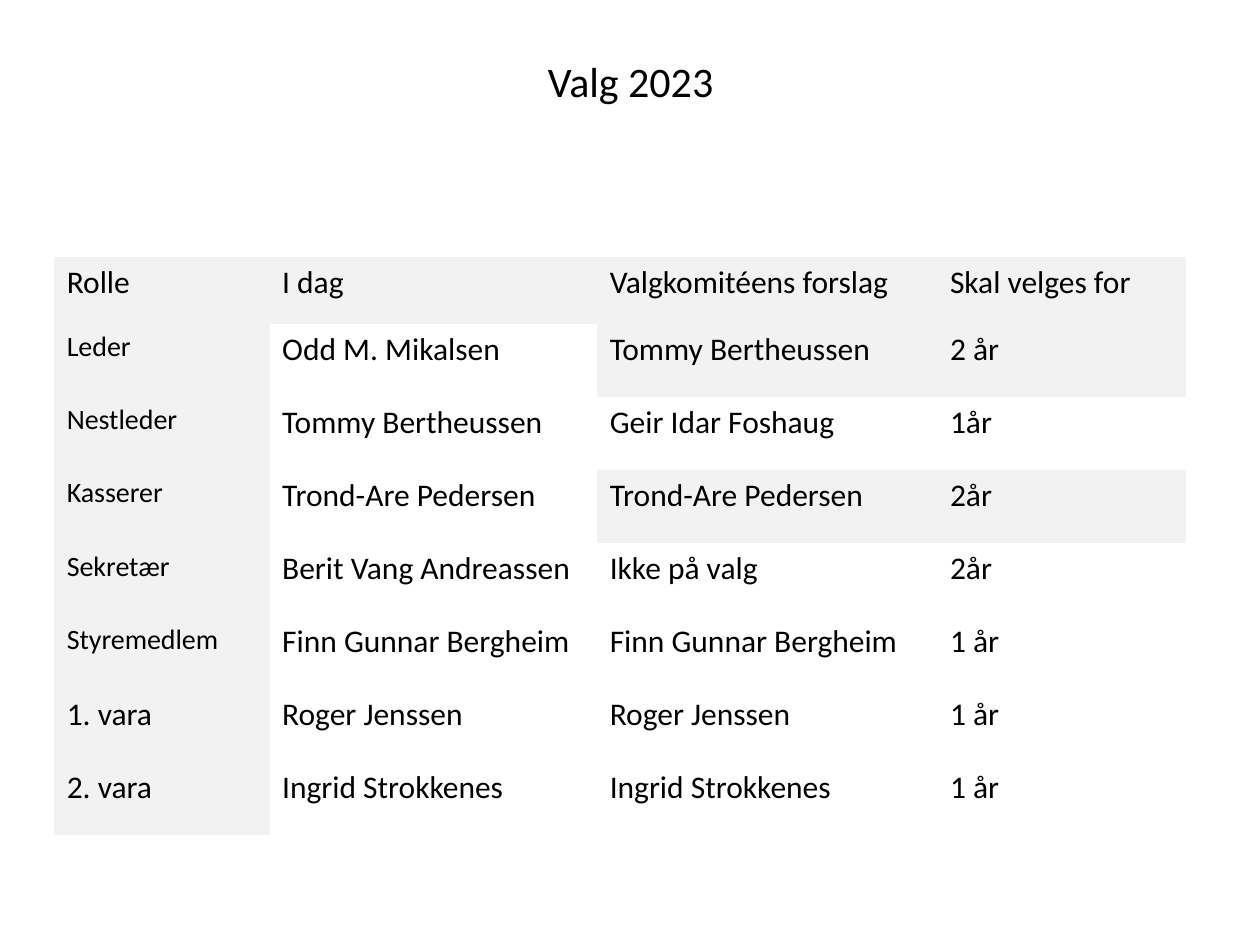
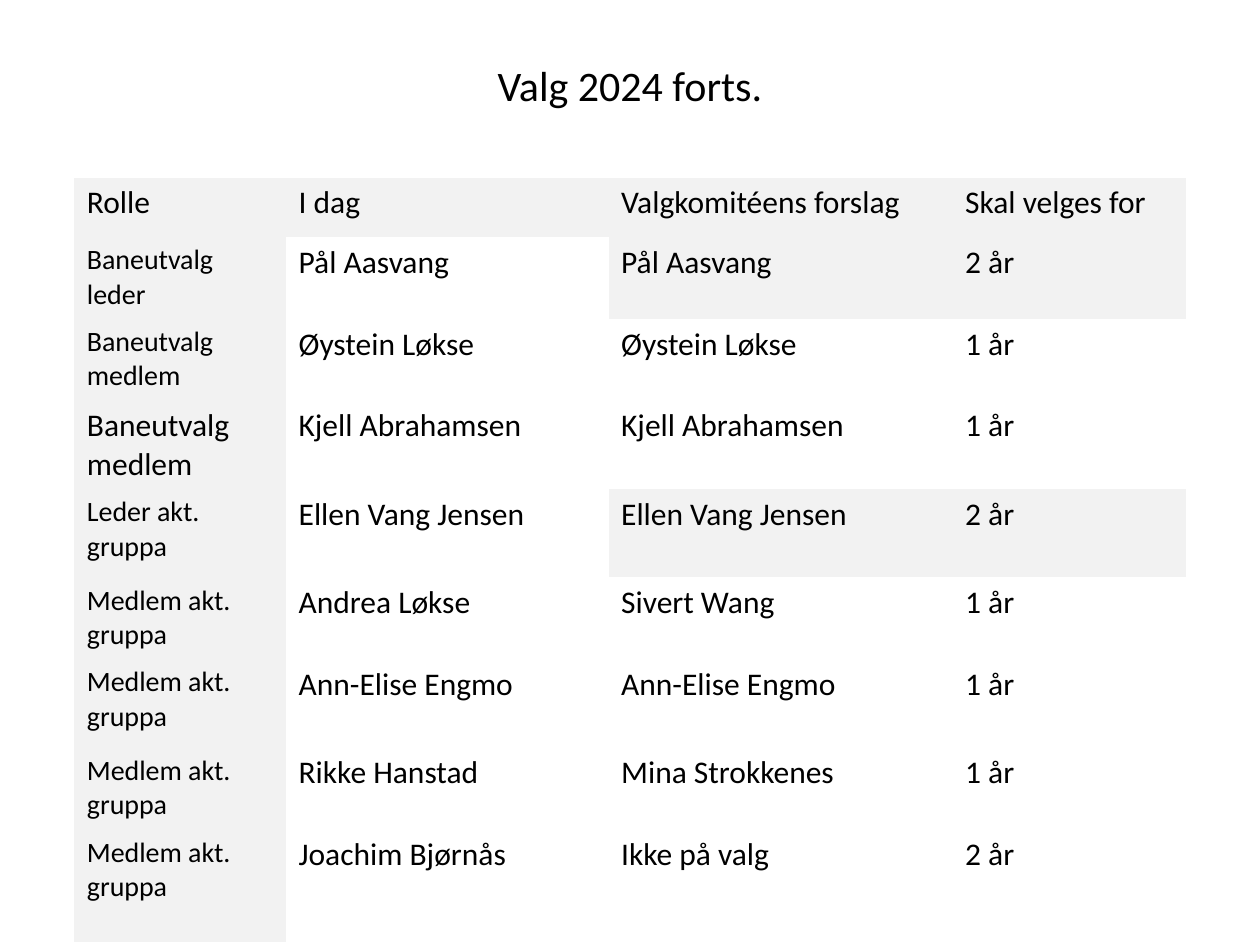
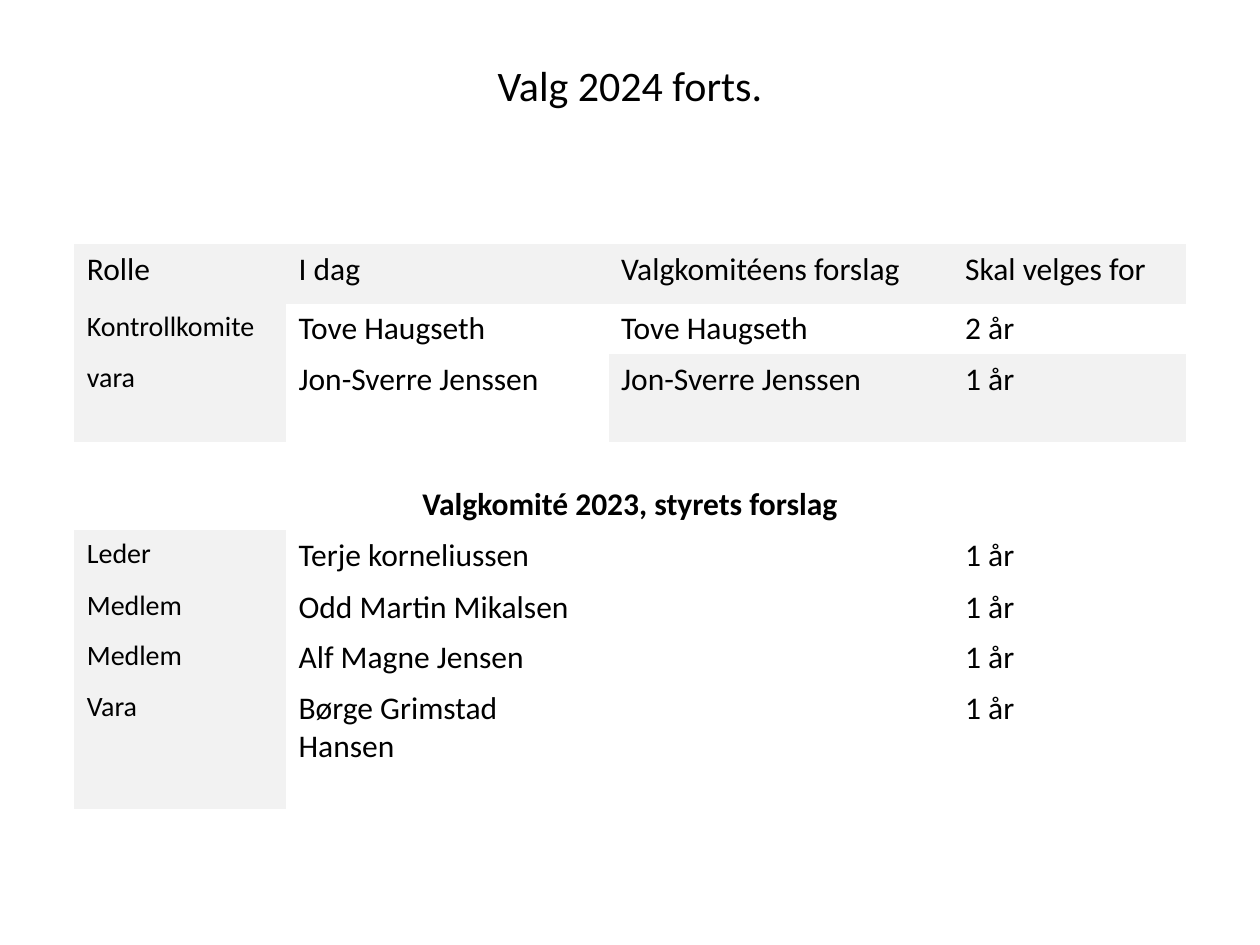
import dataclasses

import pptx
import pptx.dml.color
import pptx.enum.text
import pptx.util

Inches = pptx.util.Inches


@dataclasses.dataclass(frozen=True)
class Theme:
    font: str = "Calibri"
    ink: str = "000000"
    shade: str = "F2F2F2"
    paper: str = "FFFFFF"
    title_size: int = 24
    text_size: int = 18
    role_size: int = 16
    table_style: str = "{2D5ABB26-0587-4C30-8999-92F81FD0307C}"


@dataclasses.dataclass(frozen=True)
class Box:
    left: float
    top: float
    width: float
    height: float


@dataclasses.dataclass(frozen=True)
class Election:
    title: str
    title_box: Box
    table_box: Box
    columns: tuple
    heights: tuple
    rows: tuple
    shaded_rows: tuple = ()
    large_roles: tuple = ()


THEME = Theme()
CENTER = pptx.enum.text.PP_ALIGN.CENTER
HEADER = ("Rolle", "I dag", "Valgkomitéens forslag", "Skal velges for")
CONTINUED_TITLE = "Valg 2024 forts."
CONTINUED_BOX = Box(3.84, 0.42, 2.32, 0.5)
CONTINUED_COLUMNS = (1.68, 2.56, 2.73, 1.85)

ELECTIONS = (
    Election(
        "Valg 2023", Box(4.24, 0.39, 1.53, 0.5), Box(0.43, 2.04, 8.98, 4.59),
        (1.71, 2.6, 2.7, 1.97), (0.53,) + (0.58,) * 7,
        (
            ("Leder", "Odd M. Mikalsen", "Tommy Bertheussen", "2 år"),
            ("Nestleder", "Tommy Bertheussen", "Geir Idar Foshaug", "1år"),
            ("Kasserer", "Trond-Are Pedersen", "Trond-Are Pedersen", "2år"),
            ("Sekretær", "Berit Vang Andreassen", "Ikke på valg", "2år"),
            ("Styremedlem", "Finn Gunnar Bergheim", "Finn Gunnar Bergheim", "1 år"),
            ("1. vara", "Roger Jenssen", "Roger Jenssen", "1 år"),
            ("2. vara", "Ingrid Strokkenes", "Ingrid Strokkenes", "1 år"),
        ),
        shaded_rows=(1, 3), large_roles=(6, 7),
    ),
    Election(
        CONTINUED_TITLE, CONTINUED_BOX, Box(0.59, 1.41, 8.82, 6.06),
        CONTINUED_COLUMNS, (0.47, 0.65, 0.65, 0.69, 0.7, 0.65, 0.7, 0.65, 0.9),
        (
            ("Baneutvalg leder", "Pål Aasvang", "Pål Aasvang", "2 år"),
            ("Baneutvalg medlem", "Øystein Løkse", "Øystein Løkse", "1 år"),
            ("Baneutvalg medlem", "Kjell Abrahamsen", "Kjell Abrahamsen", "1 år"),
            ("Leder akt. gruppa", "Ellen Vang Jensen", "Ellen Vang Jensen", "2 år"),
            ("Medlem akt. gruppa", "Andrea Løkse", "Sivert Wang", "1 år"),
            ("Medlem akt. gruppa", "Ann-Elise Engmo", "Ann-Elise Engmo", "1 år"),
            ("Medlem akt. gruppa", "Rikke Hanstad", "Mina Strokkenes", "1 år"),
            ("Medlem akt. gruppa", "Joachim Bjørnås", "Ikke på valg", "2 år"),
        ),
        shaded_rows=(1, 4), large_roles=(3,),
    ),
    Election(
        CONTINUED_TITLE, CONTINUED_BOX, Box(0.59, 1.94, 8.82, 4.48),
        CONTINUED_COLUMNS, (0.47, 0.4, 0.7, 0.7, 0.41, 0.4, 0.4, 1),
        (
            ("Kontrollkomite", "Tove Haugseth", "Tove Haugseth", "2 år"),
            ("vara", "Jon-Sverre Jenssen", "Jon-Sverre Jenssen", "1 år"),
            ("Valgkomité 2023, styrets forslag",),
            ("Leder", "Terje korneliussen", "", "1 år"),
            ("Medlem", "Odd Martin Mikalsen", "", "1 år"),
            ("Medlem", "Alf Magne Jensen", "", "1 år"),
            ("Vara", "Børge Grimstad Hansen", "", "1 år"),
        ),
        shaded_rows=(2,),
    ),
)


def write_text(frame, text, size=THEME.text_size, bold=False, align=None):
    para = frame.paragraphs[0]
    para.alignment = align
    span = para.add_run()
    span.text = text
    span.font.name = THEME.font
    span.font.size = pptx.util.Pt(size)
    span.font.bold = bold
    span.font.color.rgb = pptx.dml.color.RGBColor.from_string(THEME.ink)


def fill_solid(fill, color):
    fill.solid()
    fill.fore_color.rgb = pptx.dml.color.RGBColor.from_string(color)


def place_title(page, box, text):
    title = page.shapes.title
    title.left, title.top = Inches(box.left), Inches(box.top)
    title.width, title.height = Inches(box.width), Inches(box.height)
    frame = title.text_frame
    frame.word_wrap = False
    frame.auto_size = pptx.enum.text.MSO_AUTO_SIZE.SHAPE_TO_FIT_TEXT
    write_text(frame, text, size=THEME.title_size, align=CENTER)


def write_section(table, row, text):
    heading = table.cell(row, 0)
    heading.merge(table.cell(row, len(HEADER) - 1))
    heading.fill.background()
    heading.vertical_anchor = pptx.enum.text.MSO_ANCHOR.BOTTOM
    write_text(heading.text_frame, text, bold=True, align=CENTER)


def write_row(table, row, values, election):
    for column, value in enumerate(values):
        cell = table.cell(row, column)
        if row == 0 or column == 0 or (row in election.shaded_rows and column >= 2):
            fill_solid(cell.fill, THEME.shade)
        else:
            cell.fill.background()
        small = row > 0 and column == 0 and row not in election.large_roles
        if value:
            write_text(cell.text_frame, value,
                       size=THEME.role_size if small else THEME.text_size)


def place_table(page, box, election):
    rows = (HEADER,) + election.rows
    holder = page.shapes.add_table(
        len(rows), len(HEADER), Inches(box.left), Inches(box.top),
        Inches(box.width), Inches(box.height))
    table = holder.table
    table.first_row = table.horz_banding = False
    table._tbl.tblPr[0].text = THEME.table_style
    for column, width in zip(table.columns, election.columns):
        column.width = Inches(width)
    for row, (values, height) in enumerate(zip(rows, election.heights)):
        table.rows[row].height = Inches(height)
        if len(values) == 1:
            write_section(table, row, values[0])
        else:
            write_row(table, row, values, election)


def add_election_page(deck, election):
    page = deck.slides.add_slide(deck.slide_layouts.get_by_name("Title Only"))
    fill_solid(page.background.fill, THEME.paper)
    place_title(page, election.title_box, election.title)
    place_table(page, election.table_box, election)


def main():
    deck = pptx.Presentation()
    deck.slide_width, deck.slide_height = Inches(10), Inches(7.5)
    for election in ELECTIONS:
        add_election_page(deck, election)
    deck.save("out.pptx")


if __name__ == "__main__":
    main()
